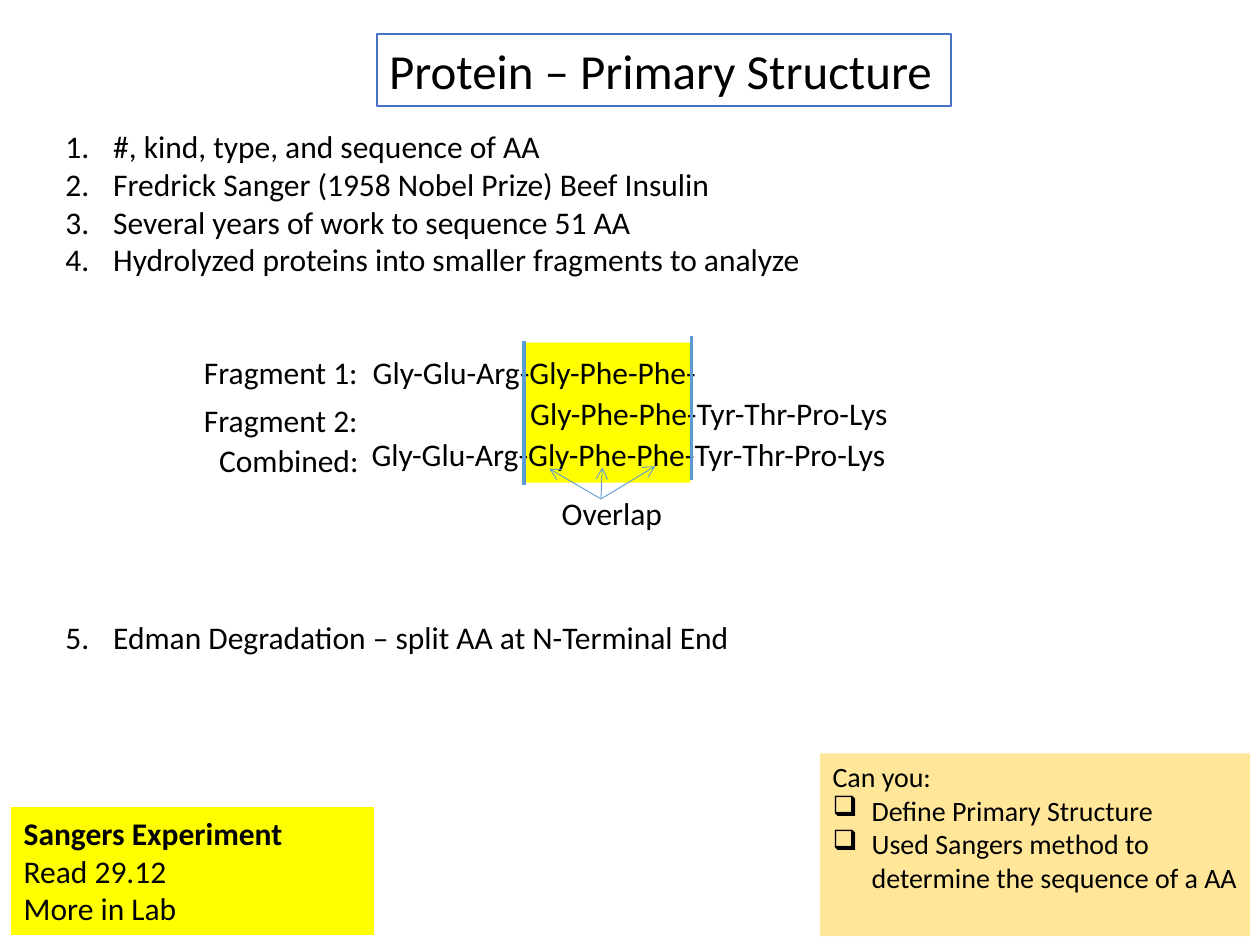
from lxml.etree import SubElement
from pptx import Presentation
from pptx.dml.color import RGBColor
from pptx.enum.shapes import MSO_CONNECTOR as Connector, MSO_SHAPE as Shape
from pptx.enum.text import MSO_ANCHOR as Anchor, MSO_AUTO_SIZE as AutoSize, PP_ALIGN as Align
from pptx.oxml.ns import qn
from pptx.util import Inches, Pt

BLACK, YELLOW, CREAM, WHITE = "000000", "FFFF00", "FFE699", "FFFFFF"
TITLE_BLUE, MARK_BLUE = "4472C4", "5B9BD5"


def color(hex_value):
    return RGBColor.from_string(hex_value)


class SlideBuilder:
    font = "Calibri"
    text_size = 18

    def __init__(self, slide):
        self.slide = slide
        self.shapes = slide.shapes

    def start_group(self):
        self.shapes = self.slide.shapes.add_group_shape().shapes

    def end_group(self):
        self.shapes = self.slide.shapes

    def box(self, place, fill, line=None, line_width=1):
        shape = self.shapes.add_shape(Shape.RECTANGLE, *map(Inches, place))
        shape.shadow.inherit = False
        shape.fill.solid()
        shape.fill.fore_color.rgb = color(fill)
        if line:
            shape.line.color.rgb = color(line)
            shape.line.width = Pt(line_width)
        else:
            shape.line.fill.background()
        return shape

    def label(self, place, lines):
        textbox = self.shapes.add_textbox(*map(Inches, place))
        return self.add_lines(textbox, lines)

    def add_lines(self, shape, lines, size=text_size, wrap=False, bold_first=False):
        frame = shape.text_frame
        frame_format = {
            "word_wrap": wrap,
            "auto_size": AutoSize.SHAPE_TO_FIT_TEXT,
            "vertical_anchor": Anchor.TOP,
        }
        for name, value in frame_format.items():
            setattr(frame, name, value)
        for index, line in enumerate(lines):
            paragraph = frame.paragraphs[0] if index == 0 else frame.add_paragraph()
            paragraph.alignment = Align.LEFT
            run = paragraph.add_run()
            run.text = line
            run_format = {
                "name": self.font,
                "size": Pt(size),
                "bold": bold_first and index == 0,
            }
            for name, value in run_format.items():
                setattr(run.font, name, value)
            run.font.color.rgb = color(BLACK)
        return frame.paragraphs

    def bullet(self, paragraph, indent, tag, **attributes):
        properties = paragraph._p.get_or_add_pPr()
        properties.set("marL", str(Inches(indent)))
        properties.set("indent", str(-Inches(indent)))
        SubElement(properties, qn(tag), **attributes)

    def line(self, start, end, width, arrow=False):
        ends = map(Inches, (*start, *end))
        connector = self.shapes.add_connector(Connector.STRAIGHT, *ends)
        connector.line.color.rgb = color(MARK_BLUE)
        connector.line.width = Pt(width)
        if arrow:
            SubElement(connector.line._get_or_add_ln(), qn("a:tailEnd"), type="arrow")
        SubElement(connector._element.spPr, qn("a:effectLst"))


def main():
    deck = Presentation()
    deck.slide_width, deck.slide_height = Inches(10), Inches(7.5)
    builder = SlideBuilder(deck.slides.add_slide(deck.slide_layouts[6]))

    title = builder.box((2.99, 0.27, 4.56, 0.57), WHITE, TITLE_BLUE)
    builder.add_lines(title, ["Protein – Primary Structure"], size=28)

    facts = builder.label((0.42, 0.96, 6.09, 4.34), [
        "#, kind, type, and sequence of AA",
        "Fredrick Sanger (1958 Nobel Prize) Beef Insulin",
        "Several years of work to sequence 51 AA",
        "Hydrolyzed proteins into smaller fragments to analyze",
        "Edman Degradation – split AA at N-Terminal End",
    ])
    facts[-1].space_before = Inches(2.7)
    for fact in facts:
        builder.bullet(fact, 0.38, "a:buAutoNum", type="arabicPeriod")

    builder.start_group()
    builder.box((4.16, 2.72, 1.32, 1.11), YELLOW)
    for left, top, width, text in [
        (2.85, 3.4, 4.35, "Gly-Glu-Arg-Gly-Phe-Phe-Tyr-Thr-Pro-Lys"),
        (4.11, 3.08, 3.08, "Gly-Phe-Phe-Tyr-Thr-Pro-Lys"),
        (2.86, 2.75, 2.81, "Gly-Glu-Arg-Gly-Phe-Phe-"),
        (1.52, 2.75, 1.44, "Fragment 1:"),
        (1.64, 3.45, 1.32, "Combined:"),
        (1.52, 3.13, 1.44, "Fragment 2:"),
        (4.36, 3.87, 1.01, "Overlap"),
    ]:
        builder.label((left, top, width, 0.4), [text])
    for edge, top in [(4.16, 2.71), (5.49, 2.67)]:
        builder.line((edge, top), (edge, top + 1.14), 2)
    for residue in [(4.36, 3.72), (4.78, 3.71), (5.2, 3.7)]:
        builder.line((4.77, 3.96), residue, 0.5, arrow=True)
    builder.end_group()

    goals = builder.box((6.51, 5.98, 3.41, 1.45), CREAM)
    goal_lines = builder.add_lines(goals, [
        "Can you:",
        "Define Primary Structure",
        "Used Sangers method to determine the sequence of a AA",
    ], size=16, wrap=True)
    for goal in goal_lines[1:]:
        builder.bullet(goal, 0.31, "a:buChar", char="❑")

    reading = builder.box((0.09, 6.41, 2.87, 1.01), YELLOW, YELLOW, 0.75)
    builder.add_lines(reading, ["Sangers Experiment", "Read 29.12", "More in Lab"],
                      wrap=True, bold_first=True)

    deck.save("out.pptx")


if __name__ == "__main__":
    main()
